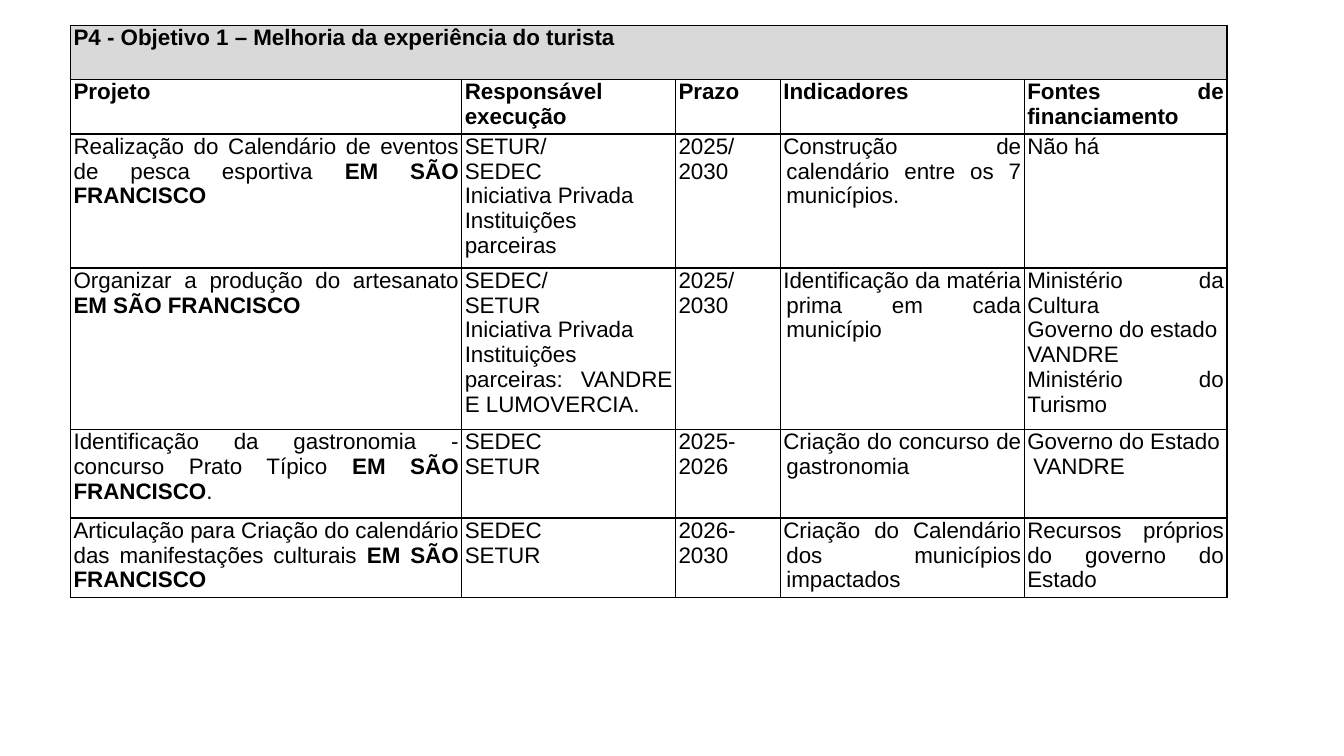
import dataclasses

import lxml.etree
import pptx
import pptx.dml.color
import pptx.enum.text
import pptx.oxml.ns
import pptx.util

Inches = pptx.util.Inches


@dataclasses.dataclass(frozen=True)
class Theme:
    font: str = "Arial"
    text_size: float = 16
    text_color: str = "000000"
    border_color: str = "000000"
    border_width: float = 1
    title_fill: str = "D9D9D9"
    side_margin: float = 0.03


class SlideBuilder:
    def __init__(self, slide, theme):
        self.slide = slide
        self.theme = theme

    def add_table(self, left, top, widths, heights):
        shape = self.slide.shapes.add_table(
            len(heights), len(widths), Inches(left), Inches(top),
            Inches(sum(widths)), Inches(sum(heights)))
        table = shape.table
        table.first_row = False
        table.horz_banding = False
        for column, width in zip(table.columns, widths):
            column.width = Inches(width)
        for row, height in zip(table.rows, heights):
            row.height = Inches(height)
        for cell in table.iter_cells():
            self.style_cell(cell)
        return table

    def style_cell(self, cell):
        cell.margin_left = cell.margin_right = Inches(self.theme.side_margin)
        cell.margin_top = cell.margin_bottom = 0
        properties = cell._tc.get_or_add_tcPr()
        qualify = pptx.oxml.ns.qn
        for side in ("a:lnL", "a:lnR", "a:lnT", "a:lnB"):
            border = lxml.etree.SubElement(properties, qualify(side))
            border.set("w", str(pptx.util.Pt(self.theme.border_width)))
            fill = lxml.etree.SubElement(border, qualify("a:solidFill"))
            color = lxml.etree.SubElement(fill, qualify("a:srgbClr"))
            color.set("val", self.theme.border_color)
        cell.fill.background()

    def fill_cell(self, cell, color):
        cell.fill.solid()
        cell.fill.fore_color.rgb = pptx.dml.color.RGBColor.from_string(color)

    def write_cell(self, cell, lines, hanging=0):
        frame = cell.text_frame
        for index, line in enumerate(lines):
            paragraph = frame.add_paragraph() if index else frame.paragraphs[0]
            paragraph.alignment = pptx.enum.text.PP_ALIGN.JUSTIFY
            if hanging:
                self.indent(paragraph, hanging, -hanging)
            for position, text in enumerate(line.split("**")):
                if text:
                    self.add_run(paragraph, text, position % 2 == 1)

    def indent(self, paragraph, left, first_line):
        properties = paragraph._p.get_or_add_pPr()
        properties.set("marL", str(Inches(left)))
        properties.set("indent", str(Inches(first_line)))

    def add_run(self, paragraph, text, bold):
        run = paragraph.add_run()
        run.text = text
        run.font.name = self.theme.font
        run.font.size = pptx.util.Pt(self.theme.text_size)
        run.font.bold = bold
        run.font.color.rgb = pptx.dml.color.RGBColor.from_string(self.theme.text_color)


TITLE = "**P4 - Objetivo 1 – Melhoria da experiência do turista**"
HEADERS = ["Projeto", "Responsável execução", "Prazo", "Indicadores",
           "Fontes de financiamento"]
PROJECTS = [
    [["Realização do Calendário de eventos de pesca esportiva **EM SÃO FRANCISCO**"],
     ["SETUR/", "SEDEC", "Iniciativa Privada", "Instituições parceiras"],
     ["2025/", "2030"],
     ["Construção de calendário entre os 7 municípios."],
     ["Não há"]],
    [["Organizar a produção do artesanato **EM SÃO FRANCISCO**"],
     ["SEDEC/", "SETUR", "Iniciativa Privada",
      "Instituições parceiras: VANDRE E LUMOVERCIA."],
     ["2025/", "2030"],
     ["Identificação da matéria prima em cada município"],
     ["Ministério da Cultura", "Governo do estado", "VANDRE", "Ministério do Turismo"]],
    [["Identificação da gastronomia - concurso Prato Típico **EM SÃO FRANCISCO**."],
     ["SEDEC", "SETUR"],
     ["2025-2026"],
     ["Criação do concurso de gastronomia"],
     ["Governo do Estado", "VANDRE"]],
    [["Articulação para Criação do calendário das manifestações culturais "
      "**EM SÃO FRANCISCO**"],
     ["SEDEC", "SETUR"],
     ["2026-2030"],
     ["Criação do Calendário dos municípios impactados"],
     ["Recursos próprios do governo do Estado"]],
]
COLUMN_WIDTHS = [3.88, 2.12, 1.04, 2.42, 2.01]
ROW_HEIGHTS = [0.54, 0.54, 1.33, 1.6, 0.88, 0.79]
INDICATOR_COLUMN = 3
FIRST_PROJECT_ROW = 2


def main():
    presentation = pptx.Presentation()
    presentation.slide_width = Inches(13.33)
    presentation.slide_height = Inches(7.5)
    slide = presentation.slides.add_slide(presentation.slide_layouts[6])
    theme = Theme()
    builder = SlideBuilder(slide, theme)

    table = builder.add_table(0.7, 0.25, COLUMN_WIDTHS, ROW_HEIGHTS)
    title_cell = table.cell(0, 0)
    title_cell.merge(table.cell(0, len(COLUMN_WIDTHS) - 1))
    builder.fill_cell(title_cell, theme.title_fill)
    builder.write_cell(title_cell, [TITLE])
    for column, header in enumerate(HEADERS):
        builder.write_cell(table.cell(1, column), [f"**{header}**"])
    for row, project in enumerate(PROJECTS, FIRST_PROJECT_ROW):
        for column, lines in enumerate(project):
            hanging = theme.side_margin if column == INDICATOR_COLUMN else 0
            builder.write_cell(table.cell(row, column), lines, hanging)
    gastronomy_sources = table.cell(4, 4).text_frame.paragraphs
    builder.indent(gastronomy_sources[1], 0.06, 0)

    presentation.save("out.pptx")


if __name__ == "__main__":
    main()
